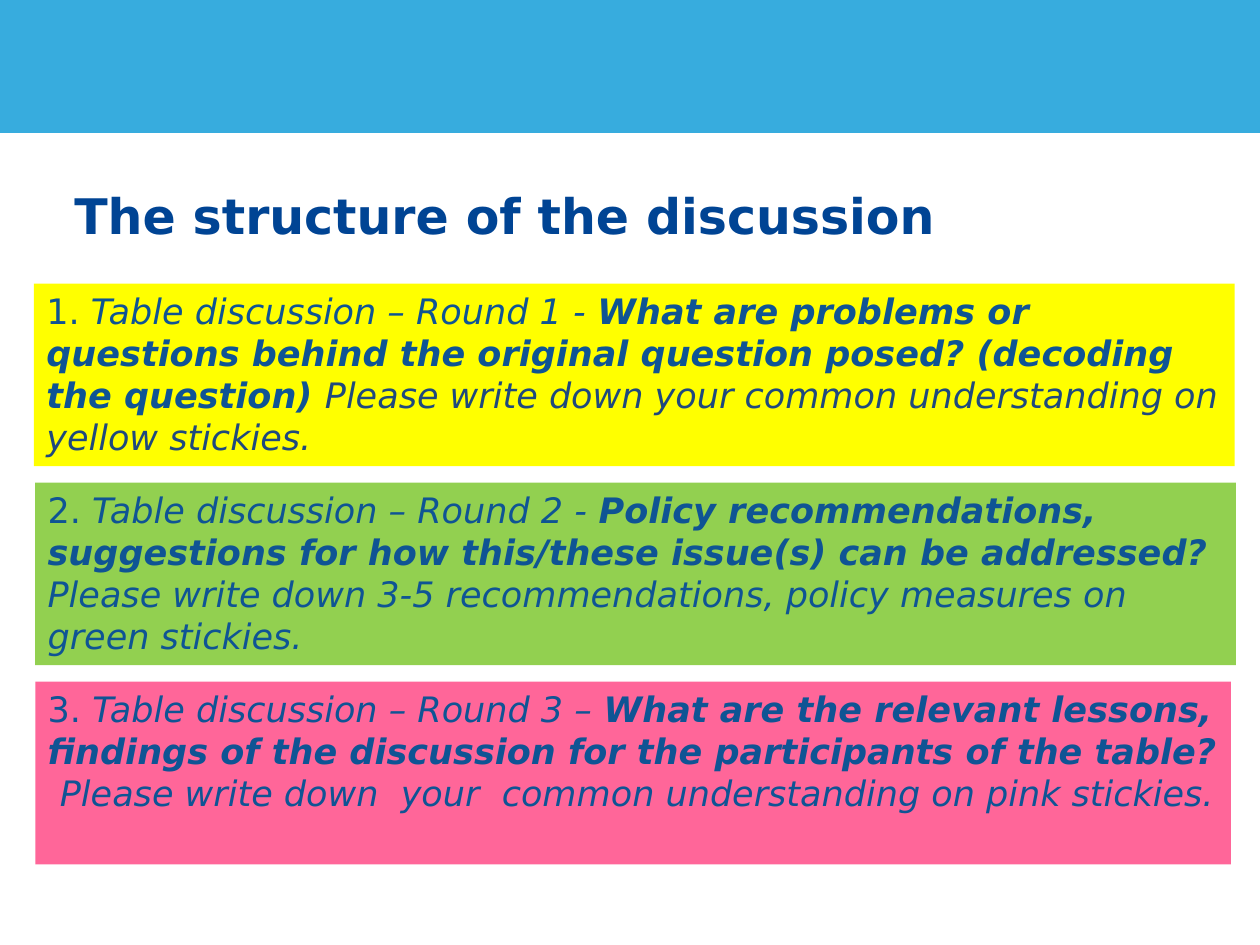
from dataclasses import dataclass

from pptx import Presentation
from pptx import util as u
from pptx.dml.color import RGBColor
from pptx.enum import shapes, text


@dataclass(frozen=True)
class Theme:
    font: str = "DejaVu Sans"
    title_size: int = 28
    body_size: int = 20
    banner: str = "37ACDE"
    title: str = "004494"
    body: str = "0F5494"
    navy: str = "1F497D"
    yellow: str = "FFFF00"
    green: str = "92D050"
    pink: str = "FF6699"


THEME = Theme()
WIDTH, HEIGHT = 10, 7.5
CARD_TOP, CARD_STEP, CARD_HEIGHT = 2.25, 1.58, 1.45

# Each round: left, width, fill, label, question, task, task colour
ROUNDS = [
    (0.27, 9.53, THEME.yellow, "Table discussion – Round 1 - ",
     "What are problems or questions behind the original question posed? "
     "(decoding the question) ",
     "Please write down your common understanding on yellow stickies.",
     THEME.navy),
    (0.28, 9.53, THEME.green, "Table discussion – Round 2 - ",
     "Policy recommendations, suggestions for how this/these issue(s) "
     "can be addressed?  ",
     "Please write down 3-5 recommendations, policy measures on green stickies.",
     THEME.body),
    (0.28, 9.49, THEME.pink, "Table discussion – Round 3 – ",
     "What are the relevant lessons, findings of the discussion for the "
     "participants of the table?  ",
     "Please write down  your  common understanding on pink stickies.",
     THEME.body),
]


def add_span(para, words, size=THEME.body_size, color=THEME.body,
             bold=False, italic=False):
    span = para.add_run()
    span.text = words
    font = span.font
    font.name, font.size = THEME.font, u.Pt(size)
    font.bold, font.italic = bold, italic
    font.color.rgb = RGBColor.from_string(color)


def add_panel(page, box, fill):
    panel = page.shapes.add_shape(shapes.MSO_SHAPE.RECTANGLE, *map(u.Inches, box))
    panel.shadow.inherit = False
    panel.fill.solid()
    panel.fill.fore_color.rgb = RGBColor.from_string(fill)
    panel.line.fill.background()
    return panel


def add_banner(page, box):
    banner = add_panel(page, box, THEME.banner)
    banner.line.color.rgb = RGBColor.from_string(THEME.banner)
    banner.line.width = u.Pt(0.75)


def add_title(page, box, words):
    frame = page.shapes.add_textbox(*map(u.Inches, box)).text_frame
    frame.word_wrap = True
    frame.margin_left = frame.margin_right = 0
    frame.margin_top = frame.margin_bottom = 0
    add_span(frame.paragraphs[0], words, size=THEME.title_size,
             color=THEME.title, bold=True)


def add_round(page, box, number, fill, label, question, task, task_color):
    frame = add_panel(page, box, fill).text_frame
    frame.word_wrap = True
    frame.vertical_anchor = text.MSO_ANCHOR.TOP
    para = frame.paragraphs[0]
    para.alignment = text.PP_ALIGN.LEFT
    add_span(para, f"{number}. ")
    add_span(para, label, italic=True)
    add_span(para, question, bold=True, italic=True)
    add_span(para, task, color=task_color, italic=True)


def main():
    deck = Presentation()
    deck.slide_width, deck.slide_height = u.Inches(WIDTH), u.Inches(HEIGHT)
    page = deck.slides.add_slide(deck.slide_layouts[6])

    # Header
    add_banner(page, (0, 0, WIDTH, 0.14 * HEIGHT))
    add_title(page, (0.59, 1.47, 8.61, 0.94), "The structure of the discussion")

    # Discussion rounds, stacked at an equal step
    for index, (left, width, *content) in enumerate(ROUNDS):
        box = (left, CARD_TOP + index * CARD_STEP, width, CARD_HEIGHT)
        add_round(page, box, index + 1, *content)

    deck.save("out.pptx")


if __name__ == "__main__":
    main()
